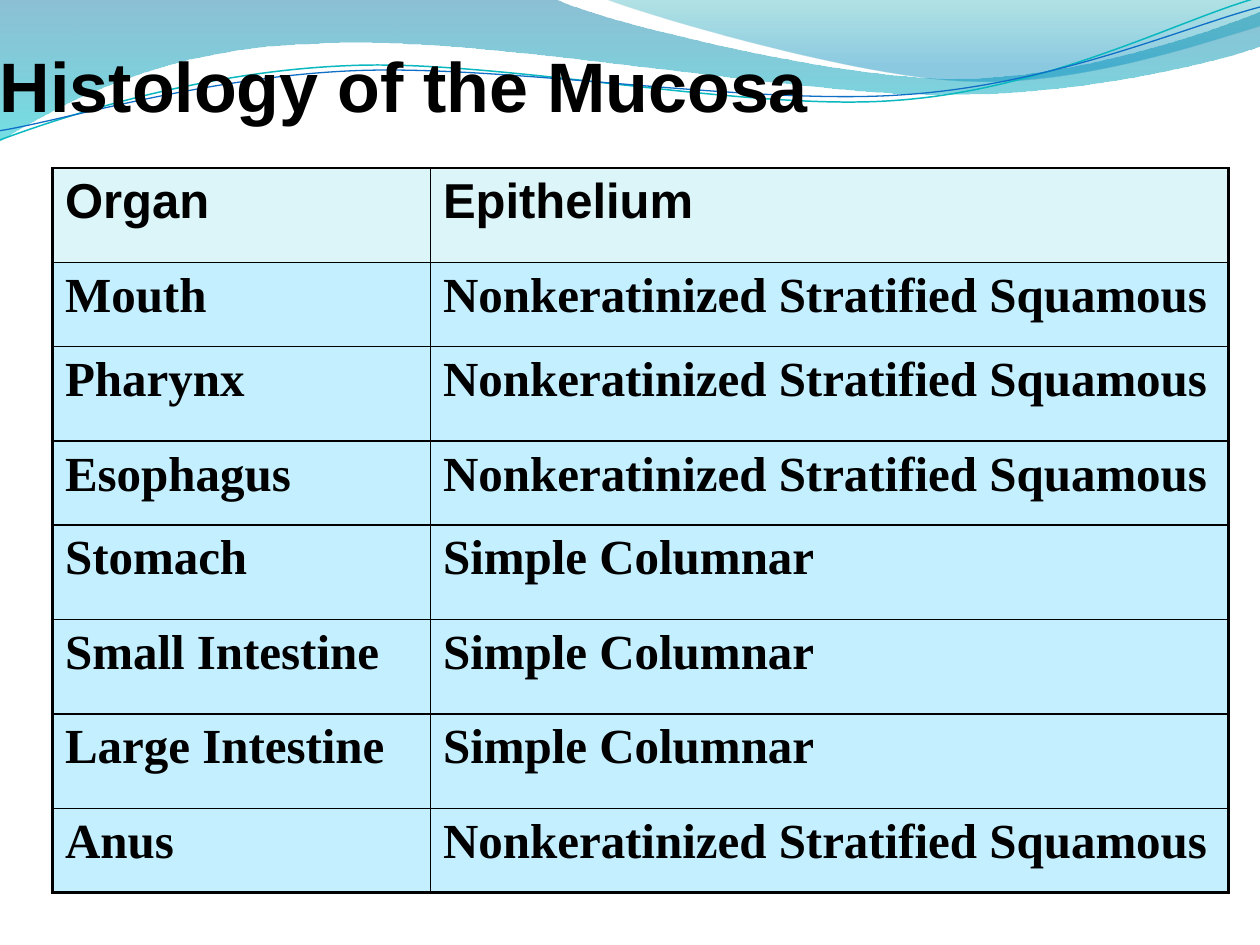
from lxml.etree import SubElement
from pptx import Presentation
from pptx.dml.color import RGBColor
from pptx.enum.text import MSO_ANCHOR
from pptx.oxml import parse_xml
from pptx.oxml.ns import nsdecls, qn
from pptx.util import Emu, Pt

PX = 9525
BLACK = RGBColor(0x00, 0x00, 0x00)
HEADER_TINT = RGBColor(0xDB, 0xF5, 0xF9)
BODY_TINT = RGBColor(0xC4, 0xEF, 0xFF)
DEEP_BLUE = RGBColor(0x00, 0x74, 0xA1)
AQUA = RGBColor(0x00, 0xC6, 0xCF)
TEAL = RGBColor(0x00, 0xA1, 0xA9)
SKY = RGBColor(0x00, 0x8B, 0xBF)
TEAL_LINE = RGBColor(0x0A, 0xB8, 0xBF)
BLUE_LINE = RGBColor(0x0F, 0x6F, 0xC6)

RIPPLE_TILT = -2.7
BAND = [(0, 0), (422, -1), (457, 16, 637, 60, 728, 60),
        (819, 60, 920, 25, 960, 9), (961, 35),
        (944, 42, 835, 73, 716, 72), (597, 72, 367, 27, 247, 33),
        (124, 35, 44, 80, -1, 108), (0, 0)]
CREST = [(460, -1), (489, 11, 655, 60, 738, 62),
         (822, 66, 923, 31, 960, 20), (960, 0), (460, -1)]
TEAL_RIPPLE = [(-2, 84), (45, 69, 152, 39, 266, 40),
               (380, 40, 568, 90, 683, 86), (799, 83, 902, 34, 960, 21)]
BLUE_RIPPLE = [(-2, 77), (44, 72, 158, 43, 272, 44),
               (387, 45, 572, 85, 687, 82), (802, 80, 905, 40, 962, 28)]

COLUMN_WIDTHS = [288, 608]
TALL, SHORT = 72, 64
ROW_HEIGHTS = [TALL, SHORT, TALL, SHORT, TALL, TALL, TALL, SHORT]
SQUAMOUS = "Nonkeratinized Stratified Squamous"
COLUMNAR = "Simple Columnar"
EPITHELIA = [("Organ", "Epithelium"), ("Mouth", SQUAMOUS), ("Pharynx", SQUAMOUS),
             ("Esophagus", SQUAMOUS), ("Stomach", COLUMNAR),
             ("Small Intestine", COLUMNAR), ("Large Intestine", COLUMNAR),
             ("Anus", SQUAMOUS)]


def px(length):
    """Turn px into EMU."""
    return Emu(length * PX)


def add_wave(slide, left, top, segments, closed):
    """Draw an outline of lines and cubic curves, offset by left and top."""
    ends = [segment[-2:] for segment in segments]
    builder = slide.shapes.build_freeform(*ends[0], scale=PX)
    builder.add_line_segments(ends[1:], close=closed)
    wave = builder.convert_to_shape(px(left), px(top))
    wave.shadow.inherit = False
    origin = [min(values) for values in zip(*ends)]
    sides = list(wave._element.iter(qn("a:lnTo")))
    for side, segment in zip(sides, segments[1:]):
        if len(segment) == 2:
            continue
        curve = parse_xml(f'<a:cubicBezTo {nsdecls("a")}/>')
        for x, y in zip(segment[::2], segment[1::2]):
            SubElement(curve, qn("a:pt"), x=str(x - origin[0]), y=str(y - origin[1]))
        side.getparent().replace(side, curve)
    return wave


def add_water(slide, left, top, segments, stops):
    """Draw a wave filled from top to bottom with translucent colours."""
    water = add_wave(slide, left, top, segments, True)
    water.line.fill.background()
    water.fill.gradient()
    water.fill.gradient_angle = 270
    for stop, (position, color, _) in zip(water.fill.gradient_stops, stops):
        stop.position = position
        stop.color.rgb = color
    tints = list(water._element.spPr.iter(qn("a:srgbClr")))
    for tint, (_, _, opacity) in zip(tints, stops):
        SubElement(tint, qn("a:alpha"), val=str(opacity * 1000))


def add_ripple(slide, left, top, segments, color, weight):
    """Draw a thin open wave line, slightly tilted."""
    ripple = add_wave(slide, left, top, segments, False)
    ripple.rotation = RIPPLE_TILT
    ripple.fill.background()
    ripple.line.color.rgb = color
    ripple.line.width = Pt(weight)


def add_waves(slide, left, top):
    """Place the wave decoration along the top of the slide."""
    add_water(slide, left, top, BAND, [(0, DEEP_BLUE, 45), (1, AQUA, 55)])
    add_water(slide, left, top, CREST, [(0, TEAL, 30), (0.8, SKY, 45)])
    add_ripple(slide, left, top, TEAL_RIPPLE, TEAL_LINE, 0.85)
    add_ripple(slide, left, top, BLUE_RIPPLE, BLUE_LINE, 0.75)


def add_text(frame, text, face, size):
    """Write one bold black run into the frame."""
    run = frame.paragraphs[0].add_run()
    run.text = text
    run.font.name = face
    run.font.size = Pt(size)
    run.font.bold = True
    run.font.color.rgb = BLACK


def add_heading(slide, left, top, width, height):
    """Place the slide heading at the bottom of its box."""
    heading = slide.shapes.add_textbox(px(left), px(top), px(width), px(height))
    frame = heading.text_frame
    frame.word_wrap = True
    frame.vertical_anchor = MSO_ANCHOR.BOTTOM
    frame.margin_left = frame.margin_right = frame.margin_bottom = 0
    add_text(frame, "Histology of the Mucosa", "Arial", 40)


def set_borders(cell, weights):
    """Give the cell black left, right, top and bottom borders in points."""
    properties = cell._tc.get_or_add_tcPr()
    for index, (side, weight) in enumerate(zip("LRTB", weights)):
        properties.insert(index, parse_xml(
            f'<a:ln{side} {nsdecls("a")} w="{Pt(weight)}"><a:solidFill>'
            f'<a:srgbClr val="{BLACK}"/></a:solidFill></a:ln{side}>'))


def add_epithelium_table(slide, left, top):
    """Place the table of organs and their epithelium."""
    table = slide.shapes.add_table(
        len(EPITHELIA), len(COLUMN_WIDTHS), px(left), px(top),
        px(sum(COLUMN_WIDTHS)), px(sum(ROW_HEIGHTS))).table
    table.horz_banding = False
    for column, width in zip(table.columns, COLUMN_WIDTHS):
        column.width = px(width)
    for row_index, (row, height) in enumerate(zip(table.rows, ROW_HEIGHTS)):
        row.height = px(height)
        is_header = row_index == 0
        bottom = 2.25 if row_index == len(EPITHELIA) - 1 else 1
        for column_index, cell in enumerate(row.cells):
            cell.fill.solid()
            cell.fill.fore_color.rgb = HEADER_TINT if is_header else BODY_TINT
            sides = (2.25, 1) if column_index == 0 else (1, 2.25)
            set_borders(cell, (*sides, 1, bottom))
            add_text(cell.text_frame, EPITHELIA[row_index][column_index],
                     "Arial" if is_header else "Times New Roman", 28)


def main():
    """Build the slide and save it."""
    deck = Presentation()
    deck.slide_width, deck.slide_height = px(960), px(720)
    slide = deck.slides.add_slide(deck.slide_layouts[6])
    add_waves(slide, 0, 0)
    add_heading(slide, 0, 24, 960, 72)
    add_epithelium_table(slide, 40, 128)
    deck.save("out.pptx")


if __name__ == "__main__":
    main()
